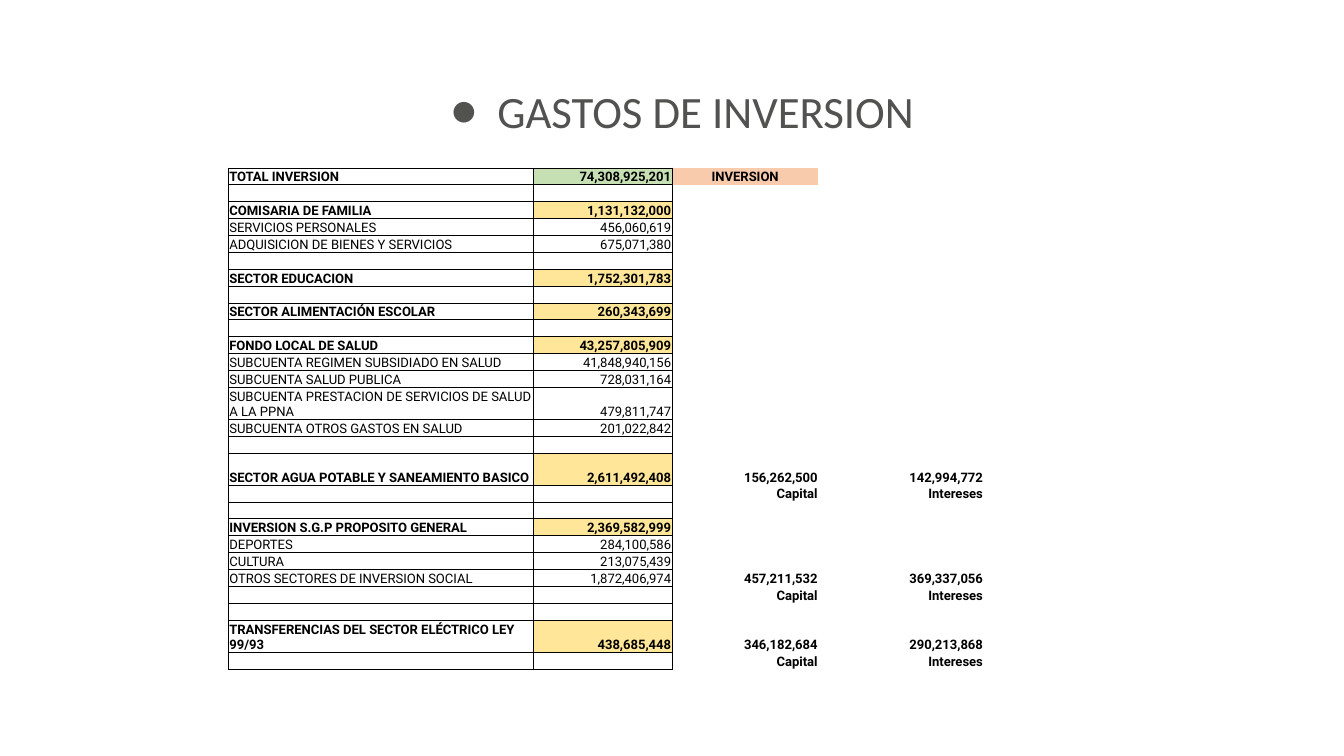
from lxml.etree import SubElement
from pptx import Presentation
from pptx.dml.color import RGBColor
from pptx.enum.text import MSO_ANCHOR as Anchor, PP_ALIGN as Align
from pptx.oxml.ns import qn
from pptx.util import Inches, Pt

INK, GREY = "000000", "525250"
GREEN, PEACH, YELLOW = "C6E0B4", "F8CBAD", "FFE699"
PLAIN_TABLE = "{2D5ABB26-0587-4C30-8999-92F81FD0307C}"
ROW, TALL_ROW = Pt(9.05), Pt(17)
COLUMNS = [2.27, 1.03, 1.09, 1.23, 0.98]
ALIGNMENTS = [Align.LEFT, Align.RIGHT, Align.RIGHT, Align.RIGHT, Align.RIGHT]
CAPTIONS = ["", "", "Capital", "Intereses"]

ROWS = [
    ["TOTAL INVERSION", "74,308,925,201", "INVERSION"],
    [],
    ["COMISARIA DE FAMILIA", "1,131,132,000"],
    ["SERVICIOS PERSONALES", "456,060,619"],
    ["ADQUISICION DE BIENES Y SERVICIOS", "675,071,380"],
    [],
    ["SECTOR EDUCACION", "1,752,301,783"],
    [],
    ["SECTOR ALIMENTACIÓN ESCOLAR", "260,343,699"],
    [],
    ["FONDO LOCAL DE SALUD", "43,257,805,909"],
    ["SUBCUENTA REGIMEN SUBSIDIADO EN SALUD", "41,848,940,156"],
    ["SUBCUENTA SALUD PUBLICA", "728,031,164"],
    ["SUBCUENTA PRESTACION DE SERVICIOS DE SALUD A LA PPNA", "479,811,747"],
    ["SUBCUENTA OTROS GASTOS EN SALUD", "201,022,842"],
    [],
    ["SECTOR AGUA POTABLE Y SANEAMIENTO BASICO", "2,611,492,408", "156,262,500", "142,994,772"],
    CAPTIONS,
    [],
    ["INVERSION S.G.P PROPOSITO GENERAL", "2,369,582,999"],
    ["DEPORTES", "284,100,586"],
    ["CULTURA", "213,075,439"],
    ["OTROS SECTORES DE INVERSION SOCIAL", "1,872,406,974", "457,211,532", "369,337,056"],
    CAPTIONS,
    [],
    ["TRANSFERENCIAS DEL SECTOR ELÉCTRICO LEY 99/93", "438,685,448", "346,182,684", "290,213,868"],
    CAPTIONS,
]
TALL = {13, 16, 25}
SECTIONS = {2, 6, 8, 10, 16, 19, 25}
FILLS = {(0, 1): GREEN, (0, 2): PEACH} | {(row, 1): YELLOW for row in SECTIONS}


def color(value):
    return RGBColor.from_string(value)


def add_run(paragraph, text, size, font, ink, bold=False):
    run = paragraph.add_run()
    run.text = text
    run.font.size = Pt(size)
    run.font.name = font
    run.font.bold = bold
    run.font.color.rgb = color(ink)


presentation = Presentation()
presentation.slide_width = Inches(10)
presentation.slide_height = presentation.slide_width * 9 // 16
slide = presentation.slides.add_slide(presentation.slide_layouts[6])

title = slide.shapes.add_textbox(Inches(0.34), Inches(0.46), Inches(9.32), Inches(4.54))
frame = title.text_frame
frame.word_wrap = True
frame.margin_left = frame.margin_right = frame.margin_top = frame.margin_bottom = Inches(0.1)
paragraph = frame.paragraphs[0]
paragraph.alignment = Align.CENTER
paragraph.line_spacing = 1.15
properties = paragraph._p.get_or_add_pPr()
properties.set("marL", str(Inches(0.5)))
properties.set("indent", str(Inches(-0.35)))
bullet_color = SubElement(properties, qn("a:buClr"))
SubElement(bullet_color, qn("a:srgbClr"), val=GREY)
SubElement(properties, qn("a:buFont"), typeface="Calibri")
SubElement(properties, qn("a:buChar"), char="●")
add_run(paragraph, "GASTOS DE INVERSION", 24, "Calibri", GREY)

heights = [TALL_ROW if row in TALL else ROW for row in range(len(ROWS))]
table_shape = slide.shapes.add_table(
    len(ROWS), len(COLUMNS), Inches(1.7), Inches(1.25), Inches(sum(COLUMNS)), sum(heights))
table = table_shape.table
table.first_row = table.horz_banding = False
table._tbl.tblPr.find(qn("a:tableStyleId")).text = PLAIN_TABLE
for column, width in enumerate(COLUMNS):
    table.columns[column].width = Inches(width)

for row, texts in enumerate(ROWS):
    table.rows[row].height = heights[row]
    for column, alignment in enumerate(ALIGNMENTS):
        cell = table.cell(row, column)
        cell.vertical_anchor = Anchor.BOTTOM
        cell.margin_left = cell.margin_right = cell.margin_top = Pt(0.5)
        cell.margin_bottom = 0
        if column < 2:
            for side in ("lnL", "lnR", "lnT", "lnB"):
                line = SubElement(cell._tc.get_or_add_tcPr(), qn(f"a:{side}"), w=str(Pt(0.5)))
                line_fill = SubElement(line, qn("a:solidFill"))
                SubElement(line_fill, qn("a:srgbClr"), val=INK)
        if (row, column) in FILLS:
            cell.fill.solid()
            cell.fill.fore_color.rgb = color(FILLS[row, column])
        else:
            cell.fill.background()
        paragraph = cell.text_frame.paragraphs[0]
        paragraph.alignment = Align.CENTER if (row, column) == (0, 2) else alignment
        if column < len(texts) and texts[column]:
            bold = column > 1 or row == 0 or row in SECTIONS
            add_run(paragraph, texts[column], 7, "Roboto", INK, bold)
        else:
            SubElement(paragraph._p, qn("a:endParaRPr"), sz="700")

presentation.save("out.pptx")
